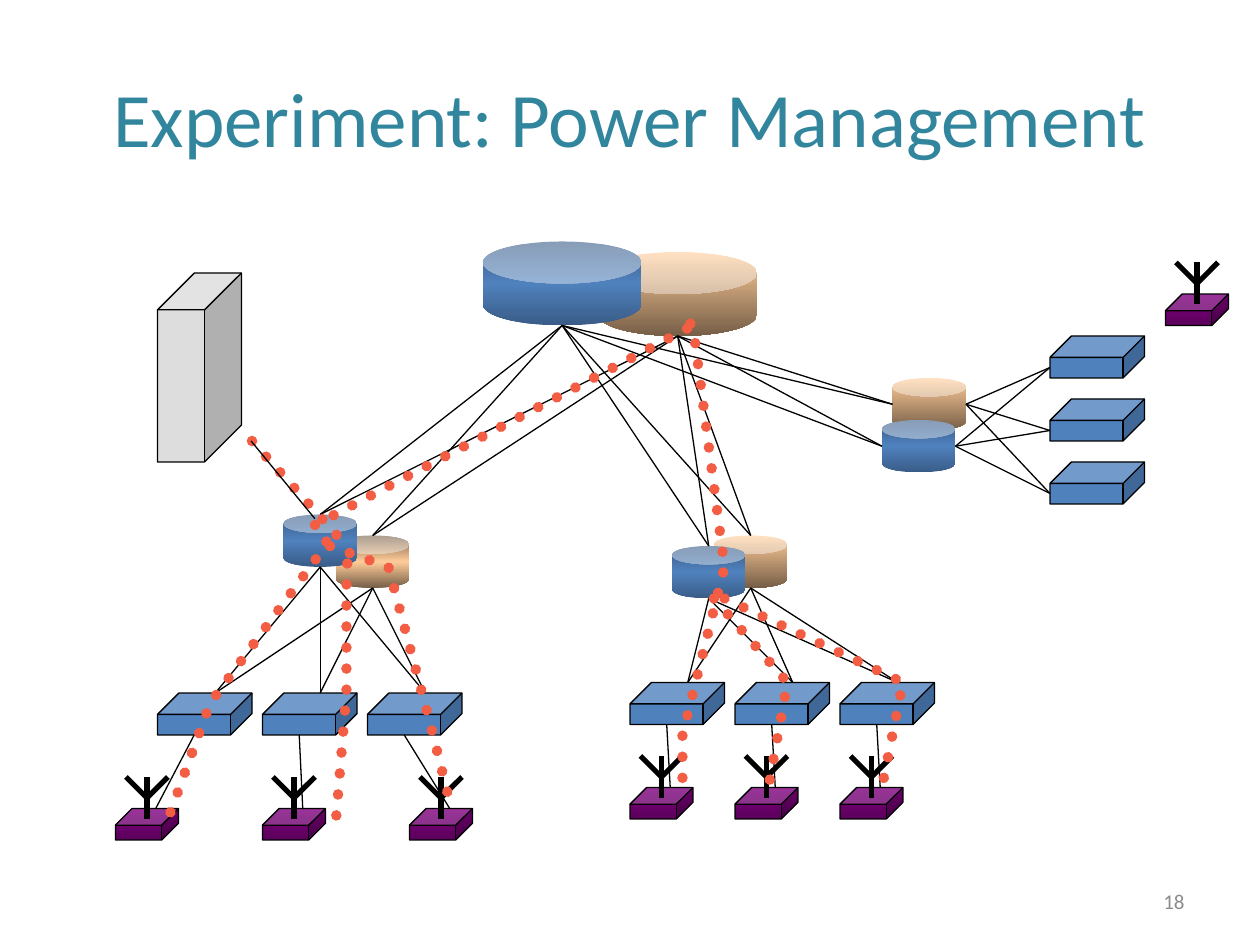
from dataclasses import dataclass
from itertools import product

from lxml.etree import SubElement
from pptx import Presentation
from pptx.dml.color import RGBColor
from pptx.enum.dml import MSO_LINE as Dash
from pptx.enum.shapes import MSO_CONNECTOR as Wire, MSO_SHAPE as Kind
from pptx.enum.text import MSO_ANCHOR as Anchor, PP_ALIGN as Align
from pptx.oxml.ns import qn
from pptx.util import Pt

Point = tuple[float, float]
Stops = list[tuple[int, RGBColor]]

# Colours
TEAL = RGBColor(0x31, 0x85, 0x9C)
GREY = RGBColor(0x8C, 0x8C, 0x8C)
BLACK = RGBColor(0, 0, 0)
BLUE = RGBColor(0x4F, 0x81, 0xBD)
NAVY = RGBColor(0x39, 0x5C, 0x87)
CREAM = RGBColor(0xFF, 0xCC, 0x99)
BROWN = RGBColor(0x76, 0x5E, 0x47)
SILVER = RGBColor(0xDD, 0xDD, 0xDD)
PURPLE = RGBColor(0x80, 0, 0x80)
PLUM = RGBColor(0x5C, 0, 0x5C)
CORAL = RGBColor(0xF2, 0x5D, 0x44)

# Gradients, top to bottom
STEEL = [(0, NAVY), (50, BLUE), (100, NAVY)]
GOLD = [(0, BROWN), (50, CREAM), (100, BROWN)]
SAND = [(0, CREAM), (100, BROWN)]
GRAPE = [(0, PURPLE), (100, PLUM)]


@dataclass(frozen=True)
class Can:
    x: float
    y: float
    stops: Stops
    w: float = 42
    h: float = 30
    lid: float = 0.35

    @property
    def top(self) -> Point:
        return self.x + self.w / 2, self.y

    @property
    def base(self) -> Point:
        return self.x + self.w / 2, self.y + self.h

    @property
    def left(self) -> Point:
        return self.x, self.y + self.h / 2

    @property
    def right(self) -> Point:
        return self.x + self.w, self.y + self.h / 2


@dataclass(frozen=True)
class Site:
    back: Can
    front: Can
    boxes: list[Point]
    nodes: list[Point]
    side: bool = False  # linked sideways, not top to bottom


CORE = [Can(342, 144, SAND, 90.5, 48, 0.5), Can(276, 138, STEEL, 90.5, 48, 0.5)]
SITES = [
    Site(Can(192, 306, GOLD), Can(162, 294, STEEL),
         [(90 + 60 * i, 396) for i in range(3)],
         [(66 + 84 * i, 462) for i in range(3)]),
    Site(Can(408, 306, SAND), Can(384, 312, STEEL),
         [(360 + 60 * i, 390) for i in range(3)],
         [(360 + 60 * i, 450) for i in range(3)]),
    Site(Can(510, 216, SAND), Can(504, 240, STEEL),
         [(600, 264 - 36 * i) for i in range(3)], [], True),
]
SPARE = (666, 168)
FLOWS = [
    [(394.5, 185), (396, 186), (414, 324), (390, 420), (390, 456)],
    [(408, 342), (450, 390), (438, 456)],
    [(414, 342), (516, 390), (504, 450)],
    [(186.5, 309.5), (186, 312), (120, 402), (96, 468)],
    [(198.5, 322), (198, 324), (198, 396), (192, 468)],
    [(188.5, 312), (222, 324), (246, 414), (258, 462)],
]
RUNS = [((144, 252), (198, 312)), ((180, 300), (396, 186))]


def shade(shape, stops: Stops) -> None:
    shape.fill.gradient()
    shape.fill.gradient_angle = 270
    ramp = shape.element.spPr.find(qn("a:gradFill")).find(qn("a:gsLst"))
    ramp.clear()
    for pos, color in stops:
        stop = SubElement(ramp, qn("a:gs"), pos=str(pos * 1000))
        SubElement(stop, qn("a:srgbClr"), val=str(color))


def draw_can(parts, can: Can) -> None:
    shape = parts.add_shape(Kind.CAN, Pt(can.x), Pt(can.y), Pt(can.w), Pt(can.h))
    shape.adjustments[0] = can.lid
    shape.shadow.inherit = False
    shape.line.fill.background()
    shade(shape, can.stops)


def draw_cube(parts, at: Point, size: Point, depth: float, paint) -> None:
    shape = parts.add_shape(Kind.CUBE, *map(Pt, at + size))
    shape.adjustments[0] = depth
    shape.shadow.inherit = False
    if isinstance(paint, RGBColor):
        shape.fill.solid()
        shape.fill.fore_color.rgb = paint
    else:
        shade(shape, paint)
    ink(shape, BLACK, 0.75)


def ink(shape, color: RGBColor, width: float, dots: bool = False) -> None:
    shape.line.color.rgb = color
    shape.line.width = Pt(width)
    if dots:
        shape.line.dash_style = Dash.ROUND_DOT
        shape.element.spPr.find(qn("a:ln")).set("cap", "rnd")


def draw_line(parts, start: Point, end: Point, color: RGBColor = BLACK,
              width: float = 0.75, dots: bool = False) -> None:
    line = parts.add_connector(Wire.STRAIGHT, *map(Pt, start + end))
    ink(line, color, width, dots)
    SubElement(line.element.spPr, qn("a:effectLst"))


def draw_flow(parts, points: list[Point]) -> None:
    start, *rest = [(Pt(x), Pt(y)) for x, y in points]
    pen = parts.build_freeform(*start)
    pen.add_line_segments(rest, close=False)
    shape = pen.convert_to_shape()
    shape.shadow.inherit = False
    shape.fill.background()
    ink(shape, CORAL, 6, True)


def draw_node(parts, at: Point) -> None:
    group = parts.add_group_shape().shapes
    x, y = at
    mid = x + 18
    draw_cube(group, at, (36, 18), 0.53, GRAPE)
    draw_line(group, (mid, y - 18), (mid, y + 6), width=3)
    for reach in (-12, 12):
        draw_line(group, (mid, y - 6), (mid + reach, y - 18), width=3)


def draw_site(parts, site: Site) -> None:
    cans = [site.back, site.front]
    for can in cans:
        draw_can(parts, can)
    for box in site.boxes:
        draw_cube(parts, box, (54, 24), 0.51, BLUE)
    for can, (x, y) in product(cans, site.boxes):
        if site.side:
            draw_line(parts, can.right, (x, y + 18))
        else:
            draw_line(parts, can.base, (x + 33, y))
    for can, hub in product(cans, CORE):
        draw_line(parts, can.left if site.side else can.top, hub.base)


def write(shape, text: str, align, size: float, color: RGBColor) -> None:
    frame = shape.text_frame
    frame.text = text
    frame.word_wrap = True
    frame.vertical_anchor = Anchor.MIDDLE
    para = frame.paragraphs[0]
    para.alignment = align
    for key, value in {"name": "Calibri", "size": Pt(size)}.items():
        setattr(para.runs[0].font, key, value)
    para.runs[0].font.color.rgb = color


def main() -> None:
    deck = Presentation()
    deck.slide_width, deck.slide_height = Pt(720), Pt(540)
    slide = deck.slides.add_slide(deck.slide_layouts[5])
    parts = slide.shapes

    # Title and page number
    title = parts.title
    place = {"left": 0, "top": 21.6, "width": 720, "height": 90}
    for key, value in place.items():
        setattr(title, key, Pt(value))
    write(title, "Experiment: Power Management", Align.CENTER, 44, TEAL)
    page = parts.add_textbox(Pt(516), Pt(500.5), Pt(168), Pt(28.75))
    write(page, "18", Align.RIGHT, 12, GREY)

    # Network
    for can in CORE:
        draw_can(parts, can)
    for site in SITES:
        draw_site(parts, site)

    # Server, radio nodes and their drops
    draw_cube(parts, (90, 156), (48, 108), 0.44, SILVER)
    for node in [n for site in SITES for n in site.nodes] + [SPARE]:
        draw_node(parts, node)
    for site in SITES:
        for box, node in zip(site.boxes, site.nodes):
            draw_line(parts, (box[0] + 21, box[1] + 24), (node[0] + 23, node[1]))

    # Dotted traffic
    group = parts.add_group_shape().shapes
    for flow in FLOWS:
        draw_flow(group, flow)
    for start, end in RUNS:
        draw_line(group, start, end, CORAL, 6, True)
    draw_line(parts, (180, 296.5), (143.5, 252))

    deck.save("out.pptx")


if __name__ == "__main__":
    main()
